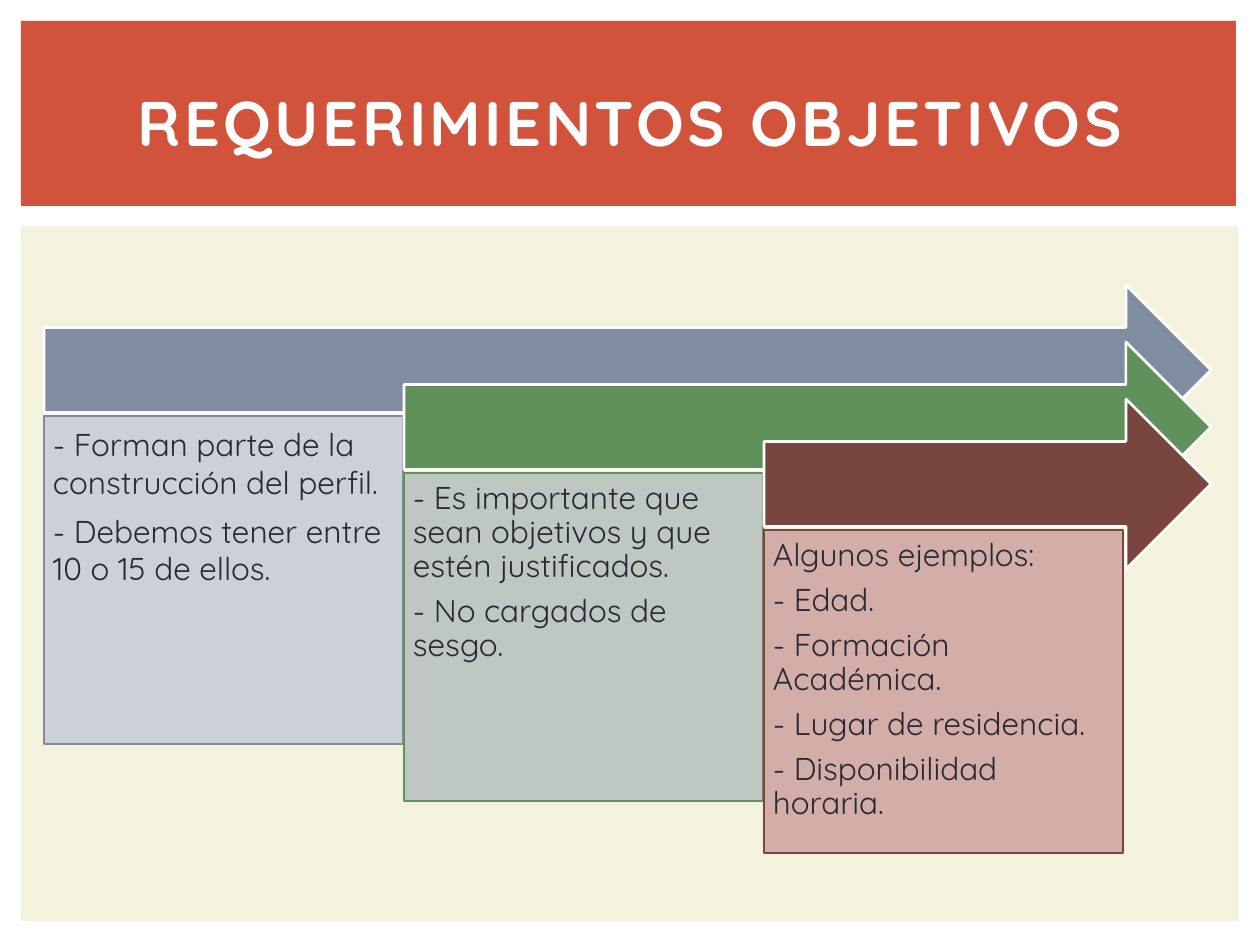
from dataclasses import dataclass

from pptx import Presentation
from pptx.dml.color import RGBColor
from pptx.enum.shapes import MSO_SHAPE
from pptx.enum.text import MSO_ANCHOR, MSO_AUTO_SIZE, PP_ALIGN
from pptx.util import Pt

EMU_PER_PX = 914400 / 126


def px(length):
    return round(length * EMU_PER_PX)


def set_all(target, values):
    for name, value in values.items():
        setattr(target, name, value)


@dataclass(frozen=True)
class Theme:
    font: str = "Quicksand"
    title_size: int = 36
    body_size: int = 18
    outline: float = 1.5
    white: str = "FFFFFF"
    text: str = "292934"
    panel: str = "F3F2DC"
    banner: str = "D2533C"


class SlideBuilder:
    def __init__(self, slide, theme):
        self.slide = slide
        self.theme = theme

    def shape(self, kind, box, fill, line=None):
        shape = self.slide.shapes.add_shape(kind, *map(px, box))
        shape.shadow.inherit = False
        shape.fill.solid()
        shape.fill.fore_color.rgb = RGBColor.from_string(fill)
        if line:
            shape.line.color.rgb = RGBColor.from_string(line)
            shape.line.width = Pt(self.theme.outline)
        else:
            shape.line.fill.background()
        return shape

    def styled_run(self, paragraph, text, size, color, bold=False):
        run = paragraph.add_run()
        run.text = text
        set_all(run.font, {"name": self.theme.font, "size": Pt(size), "bold": bold})
        run.font.color.rgb = RGBColor.from_string(color)
        return run

    def title(self, text, box):
        title = self.slide.shapes.title
        set_all(title, dict(zip(("left", "top", "width", "height"), map(px, box))))
        frame = title.text_frame
        set_all(frame, {"word_wrap": True, "auto_size": MSO_AUTO_SIZE.NONE,
                        "vertical_anchor": MSO_ANCHOR.MIDDLE})
        paragraph = frame.paragraphs[0]
        paragraph.alignment = PP_ALIGN.CENTER
        run = self.styled_run(paragraph, text, self.theme.title_size,
                              self.theme.white, True)
        run._r.get_or_add_rPr().set("spc", "200")
        # Bring the title in front of the banner
        self.slide.shapes._spTree.append(title._element)

    def arrow(self, box, fill):
        self.shape(MSO_SHAPE.RIGHT_ARROW, box, fill, self.theme.white)

    def note(self, box, fill, line, items, spacing):
        frame = self.shape(MSO_SHAPE.RECTANGLE, box, fill, line).text_frame
        margins = dict.fromkeys(
            ("margin_left", "margin_top", "margin_right", "margin_bottom"), px(9))
        set_all(frame, {"word_wrap": True, "vertical_anchor": MSO_ANCHOR.TOP, **margins})
        size = self.theme.body_size
        for index, item in enumerate(items):
            paragraph = frame.add_paragraph() if index else frame.paragraphs[0]
            set_all(paragraph, {"alignment": PP_ALIGN.LEFT, "line_spacing": spacing,
                                "space_after": Pt(size * 0.35)})
            self.styled_run(paragraph, item, size, self.theme.text)


# Arrow colour, note colour, note height, line spacing, note text
STAGES = [
    ("808DA0", "CCD1D9", 328, 1.0,
     ["- Forman parte de la construcción del perfil.",
      "- Debemos tener entre 10 o 15 de ellos."]),
    ("61915A", "BEC7C2", 328, 0.9,
     ["- Es importante que sean objetivos y que estén justificados.",
      "- No cargados de sesgo."]),
    ("79463D", "D3AEA8", 323, 0.9,
     ["Algunos ejemplos:", "- Edad.", "- Formación Académica.",
      "- Lugar de residencia.", "- Disponibilidad horaria."]),
]
FIRST_LEFT, FIRST_TOP = 44, 285
STEP_X, STEP_Y = 360, 57
ARROW_RIGHT, ARROW_HEIGHT = 1211, 170
NOTE_WIDTH, NOTE_DROP = 359, 131


def main():
    presentation = Presentation()
    set_all(presentation, {"slide_width": px(1260), "slide_height": px(945)})
    theme = Theme()
    builder = SlideBuilder(
        presentation.slides.add_slide(presentation.slide_layouts[5]), theme)

    # Background panel and title banner
    builder.shape(MSO_SHAPE.RECTANGLE, (21, 226, 1217, 695), theme.panel)
    builder.shape(MSO_SHAPE.RECTANGLE, (21, 21, 1215, 185), theme.banner)
    builder.title("REQUERIMIENTOS OBJETIVOS", (53, 49, 1155, 145))

    # Staggered arrows, each with its note below
    for index, (accent, tint, note_height, spacing, items) in enumerate(STAGES):
        left = FIRST_LEFT + index * STEP_X
        top = FIRST_TOP + index * STEP_Y
        builder.arrow((left, top, ARROW_RIGHT - left, ARROW_HEIGHT), accent)
        builder.note((left, top + NOTE_DROP, NOTE_WIDTH, note_height),
                     tint, accent, items, spacing)

    presentation.save("out.pptx")


if __name__ == "__main__":
    main()
